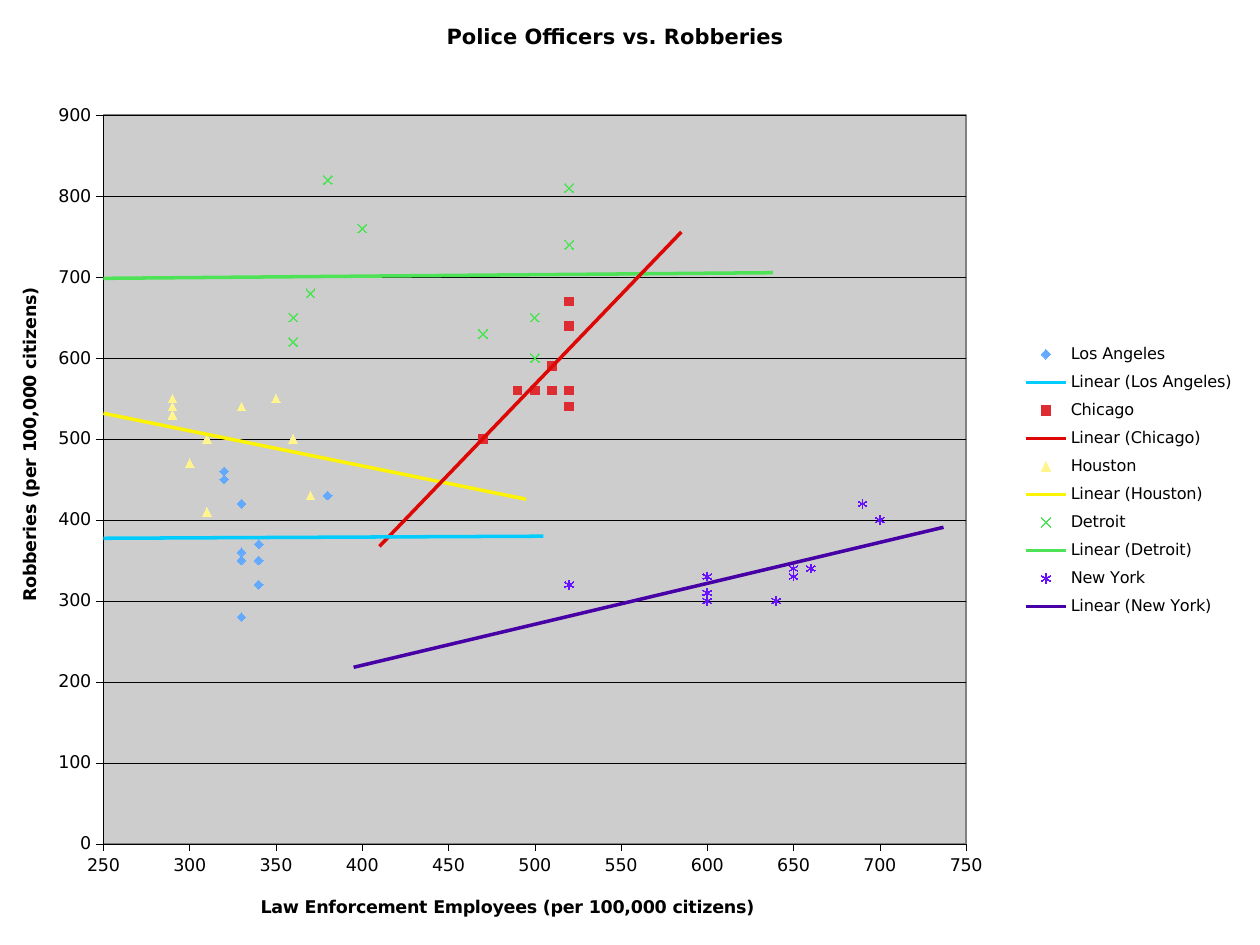
from lxml import etree
from pptx import Presentation
from pptx.chart.data import XyChartData
from pptx.dml.color import RGBColor
from pptx.enum.chart import XL_CHART_TYPE, XL_LEGEND_POSITION, XL_MARKER_STYLE, XL_TICK_MARK
from pptx.oxml import parse_xml
from pptx.oxml.ns import qn
from pptx.util import Inches, Pt

SCATTER = XL_CHART_TYPE.XY_SCATTER
RIGHT = XL_LEGEND_POSITION.RIGHT
OUTSIDE, NO_TICK = XL_TICK_MARK.OUTSIDE, XL_TICK_MARK.NONE
DIAMOND, SQUARE, TRIANGLE = XL_MARKER_STYLE.DIAMOND, XL_MARKER_STYLE.SQUARE, XL_MARKER_STYLE.TRIANGLE
CROSS, STAR = XL_MARKER_STYLE.X, XL_MARKER_STYLE.STAR

NAMESPACES = (
    'xmlns:c="http://schemas.openxmlformats.org/drawingml/2006/chart" '
    'xmlns:a="http://schemas.openxmlformats.org/drawingml/2006/main"'
)
COLORS = {
    "ink": "000000", "plot": "CDCDCD", "border": "808080",
    "los_angeles": "63AAFE", "los_angeles_trend": "00CCFF",
    "chicago": "DD2D32", "chicago_trend": "DD0806",
    "houston": "FFF58C", "houston_trend": "FCF305",
    "detroit": "4EE257", "detroit_trend": "4EE257",
    "new_york": "6711FF", "new_york_trend": "4600A5",
}
# name, colour key, marker, filled, (trend backward, forward), (employees, robberies) points
CITIES = [
    ("Los Angeles", "los_angeles", DIAMOND, True, (125, 125),
     [(330, 420), (320, 460), (320, 450), (380, 430), (340, 370), (330, 360),
      (340, 370), (330, 350), (340, 350), (340, 320), (330, 280)]),
    ("Chicago", "chicago", SQUARE, True, (60, 65),
     [(520, 670), (520, 640), (520, 640), (520, 640), (500, 560), (510, 560),
      (520, 560), (520, 540), (510, 590), (490, 560), (470, 500)]),
    ("Houston", "houston", TRIANGLE, True, (125, 125),
     [(370, 430), (360, 500), (350, 550), (330, 540), (310, 500), (290, 540),
      (290, 550), (290, 530), (300, 470), (310, 500), (310, 410)]),
    ("Detroit", "detroit", CROSS, False, (125, 118),
     [(520, 810), (520, 740), (500, 650), (470, 630), (500, 600), (400, 760),
      (380, 820), (400, 760), (370, 680), (360, 650), (360, 620)]),
    ("New York", "new_york", STAR, False, (125, 37),
     [(690, 420), (700, 400), (660, 340), (520, 320), (640, 300), (650, 340),
      (650, 330), (650, 330), (600, 300), (600, 310), (600, 330)]),
]


def color(key):
    return RGBColor.from_string(COLORS[key])


def apply(target, **values):
    for name, value in values.items():
        setattr(target, name, value)


def place(element, after, **fractions):
    """Give a chart part a manual layout, in fractions of the chart size."""
    for old in element.findall(qn("c:layout")):
        element.remove(old)
    layout = parse_xml(f"<c:layout {NAMESPACES}><c:manualLayout/></c:layout>")
    modes = {"xMode": "edge", "yMode": "edge"}
    if after is None:
        modes = {"layoutTarget": "inner", **modes}
    for tag, value in {**modes, **fractions}.items():
        etree.SubElement(layout[0], qn(f"c:{tag}")).set("val", str(value))
    if after is None:
        element.insert(0, layout)
    else:
        element.find(qn(after)).addnext(layout)


class ChartSlide:
    font_name = "DejaVu Sans"

    def __init__(self, deck):
        self.slide = deck.slides.add_slide(deck.slide_layouts[6])

    def style(self, font, size, bold=False):
        apply(font, name=self.font_name, size=Pt(size), bold=bold)
        font.color.rgb = color("ink")

    def scatter(self, cities, left, top, width, height):
        data = XyChartData()
        for name, *_, points in cities:
            series = data.add_series(name)
            for employees, robberies in points:
                series.add_data_point(employees, robberies)
        frame = self.slide.shapes.add_chart(
            SCATTER, Inches(left), Inches(top), Inches(width), Inches(height), data)
        self.chart = frame.chart
        self.style(self.chart.font, 10)
        self.chart.plots[0].vary_by_categories = False
        for series, city in zip(self.chart.plots[0].series, cities):
            name, key, marker, filled, reach, _ = city
            self.markers(series, key, marker, filled)
            self.trend(series, name, key, *reach)

    def markers(self, series, key, marker, filled):
        series.format.line.fill.background()
        apply(series.marker, style=marker, size=5)
        look = series.marker.format
        if filled:
            look.fill.solid()
            look.fill.fore_color.rgb = color(key)
        else:
            look.fill.background()
        look.line.color.rgb = color(key)

    def trend(self, series, name, key, backward, forward):
        line = parse_xml(
            f'<c:trendline {NAMESPACES}><c:name>Linear ({name})</c:name>'
            f'<c:spPr><a:ln w="{Pt(2)}"><a:solidFill><a:srgbClr val="{COLORS[key + "_trend"]}"/>'
            '</a:solidFill></a:ln></c:spPr><c:trendlineType val="linear"/>'
            f'<c:forward val="{forward}"/><c:backward val="{backward}"/>'
            '<c:dispRSqr val="0"/><c:dispEq val="0"/></c:trendline>')
        series._element.find(qn("c:xVal")).addprevious(line)

    def title(self, title, text, size, x, y):
        title.text_frame.text = text
        self.style(title.text_frame.paragraphs[0].runs[0].font, size, bold=True)
        place(title._element, "c:tx", x=x, y=y)

    def axis(self, axis, low, high, step, gridlines):
        apply(axis, minimum_scale=low, maximum_scale=high, major_unit=step,
              major_tick_mark=OUTSIDE, minor_tick_mark=NO_TICK,
              has_major_gridlines=gridlines, has_minor_gridlines=False)
        apply(axis.tick_labels, number_format="General", number_format_is_linked=False)
        self.style(axis.tick_labels.font, 10)
        lines = [axis.format.line]
        if gridlines:
            lines.append(axis.major_gridlines.format.line)
        for line in lines:
            line.color.rgb = color("ink")
            line.width = Pt(0.25)

    def plot_area(self, x, y, w, h):
        area = self.chart._chartSpace.find(".//" + qn("c:plotArea"))
        place(area, None, x=x, y=y, w=w, h=h)
        area.append(parse_xml(
            f'<c:spPr {NAMESPACES}><a:solidFill><a:srgbClr val="{COLORS["plot"]}"/></a:solidFill>'
            f'<a:ln w="{Pt(1)}"><a:solidFill><a:srgbClr val="{COLORS["border"]}"/></a:solidFill>'
            '</a:ln></c:spPr>'))

    def legend(self, x, y, w, h):
        self.chart.has_legend = True
        legend = self.chart.legend
        apply(legend, position=RIGHT, include_in_layout=False)
        self.style(legend.font, 9.2)
        place(legend._element, "c:legendPos", x=x, y=y, w=w, h=h)


def main():
    deck = Presentation()
    apply(deck, slide_width=Inches(10), slide_height=Inches(7.5))
    page = ChartSlide(deck)
    page.scatter(CITIES, -0.01, 0, 10.01, 7.5)
    chart = page.chart
    page.axis(chart.category_axis, 250, 750, 50, gridlines=False)
    page.axis(chart.value_axis, 0, 900, 100, gridlines=True)
    page.title(chart.chart_title, "Police Officers vs. Robberies", 12, 0.352, 0.02)
    page.title(chart.category_axis.axis_title,
               "Law Enforcement Employees (per 100,000 citizens)", 10, 0.205, 0.944)
    page.title(chart.value_axis.axis_title,
               "Robberies (per 100,000 citizens)", 10, 0.013, 0.301)
    page.plot_area(0.083, 0.122, 0.684, 0.771)
    page.legend(0.806, 0.355, 0.18, 0.307)
    deck.save("out.pptx")


if __name__ == "__main__":
    main()
